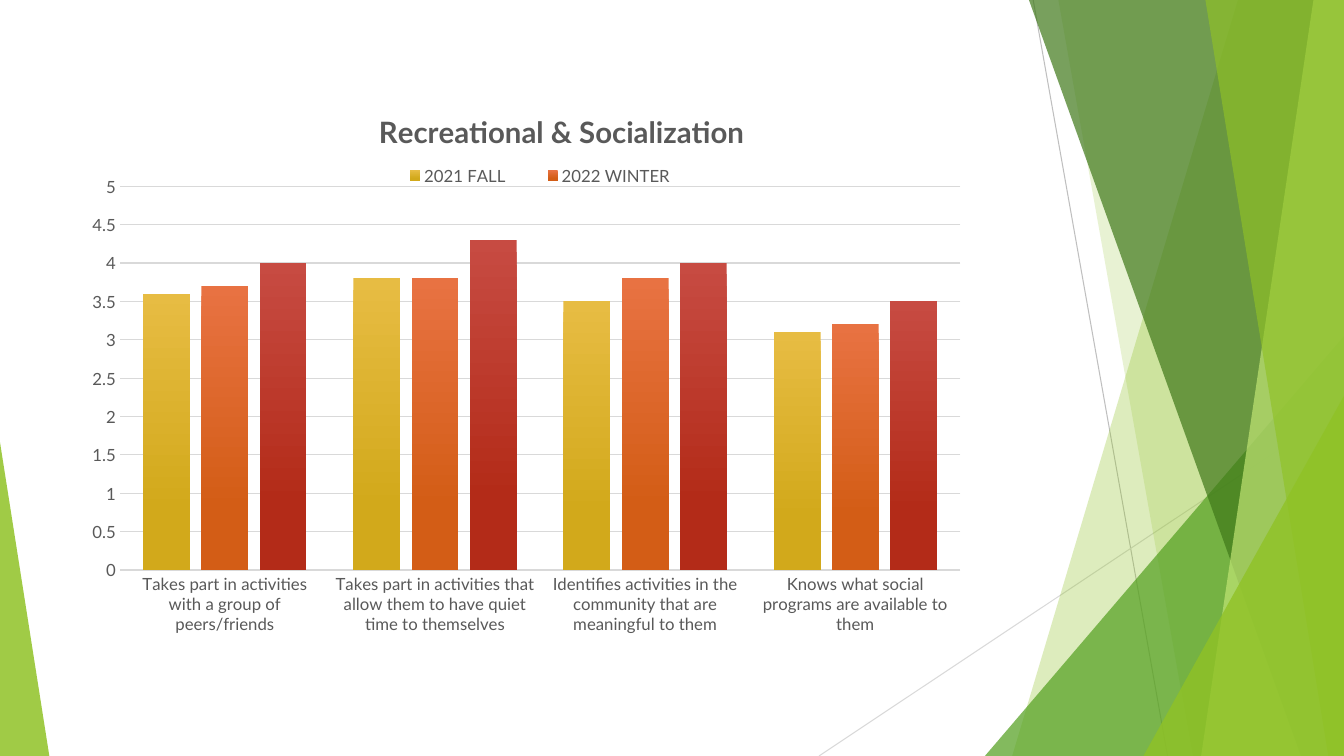
from dataclasses import dataclass

from lxml import etree
from pptx import Presentation
from pptx.chart.chart import Chart
from pptx.chart.data import CategoryChartData
from pptx.dml.color import RGBColor
from pptx.enum.chart import XL_CHART_TYPE as ChartType, XL_LEGEND_POSITION as LegendPos
from pptx.enum.chart import XL_TICK_MARK as TickMark
from pptx.enum.shapes import MSO_CONNECTOR as Connector, MSO_SHAPE as Shape
from pptx.oxml import parse_xml
from pptx.oxml.ns import nsdecls, qn
from pptx.util import Pt

PX = 9525  # EMU per px, 96 px to the inch
WIDTH, HEIGHT = 1280, 720
FONT = "Lato"

LIME = RGBColor(0x90, 0xC2, 0x26)
PALE_LIME = RGBColor(0xC0, 0xE4, 0x74)
GREEN = RGBColor(0x54, 0xA0, 0x21)
DARK_GREEN = RGBColor(0x3F, 0x78, 0x19)
GREY = RGBColor(0xBF, 0xBF, 0xBF)
LIGHT_GREY = RGBColor(0xD9, 0xD9, 0xD9)
TEXT_GREY = RGBColor(0x59, 0x59, 0x59)


@dataclass
class Ray:
    start: tuple[int, int]
    end: tuple[int, int]
    color: RGBColor


@dataclass
class Facet:
    """Full-height band reaching from a slanted left edge to the slide's right edge."""
    top_x: int
    bottom_x: int
    color: RGBColor
    opacity: int


@dataclass
class Corner:
    """Right triangle standing on the slide's bottom edge."""
    left: int
    top: int
    width: int
    apex: int
    color: RGBColor
    opacity: int


@dataclass
class Season:
    name: str
    scores: tuple[float, ...]
    light: RGBColor
    deep: RGBColor


RAYS = [
    Ray((984, 0), (1112, HEIGHT), GREY),
    Ray((WIDTH, 387), (780, HEIGHT), LIGHT_GREY),
]
DECOR = [
    Facet(1179, 964, LIME, 30),
    Facet(1008, 1136, LIME, 20),
    Corner(938, 320, 342, 1, GREEN, 72),
    Facet(980, 1239, DARK_GREEN, 70),
    Facet(1251, 1144, PALE_LIME, 70),
    Facet(1148, 1265, LIME, 65),
    Corner(1089, 377, 191, 1, LIME, 80),
    Corner(0, 421, 47, 0, LIME, 85),
]
SKILLS = [
    "Takes part in activities with a group of peers/friends",
    "Takes part in activities that allow them to have quiet time to themselves",
    "Identifies activities in the community that are meaningful to them",
    "Knows what social programs are available to them",
]
SEASONS = [
    Season("2021 FALL", (3.6, 3.8, 3.5, 3.1),
           RGBColor(0xE7, 0xBC, 0x43), RGBColor(0xD2, 0xA9, 0x1B)),
    Season("2022 WINTER", (3.7, 3.8, 3.8, 3.2),
           RGBColor(0xE8, 0x72, 0x42), RGBColor(0xD3, 0x5D, 0x16)),
    Season("", (4, 4.3, 4, 3.5),
           RGBColor(0xC7, 0x4B, 0x42), RGBColor(0xB3, 0x2B, 0x18)),
]


def draw_ray(shapes, ray: Ray) -> None:
    ends = [v * PX for v in ray.start + ray.end]
    line = shapes.add_connector(Connector.STRAIGHT, *ends)
    line.line.color.rgb = ray.color
    line.line.width = Pt(0.75)
    etree.SubElement(line._element.spPr, qn("a:effectLst"))


def draw_decor(shapes, part: Facet | Corner) -> None:
    if isinstance(part, Facet):
        outline = shapes.build_freeform(part.top_x, 0, scale=PX)
        outline.add_line_segments([(WIDTH, 0), (WIDTH, HEIGHT), (part.bottom_x, HEIGHT)])
        shape = outline.convert_to_shape()
    else:
        box = (part.left, part.top, part.width, HEIGHT - part.top)
        shape = shapes.add_shape(Shape.ISOSCELES_TRIANGLE, *(v * PX for v in box))
        shape.adjustments[0] = part.apex
    shape.shadow.inherit = False
    shape.line.fill.background()
    shape.fill.solid()
    shape.fill.fore_color.rgb = part.color
    color = shape._element.spPr.find(".//" + qn("a:srgbClr"))
    etree.SubElement(color, qn("a:alpha"), val=str(part.opacity * 1000))


def set_font(font, size: int, bold: bool = False) -> None:
    font.name, font.size, font.bold = FONT, Pt(size), bold
    font.color.rgb = TEXT_GREY


def layout_xml(inner: bool = False, **place: float):
    """Manual layout, with x, y, w and h as shares of the chart area."""
    target = '<c:layoutTarget val="inner"/>' if inner else ""
    modes = '<c:xMode val="edge"/><c:yMode val="edge"/>'
    sizes = "".join(f'<c:{key} val="{share}"/>' for key, share in place.items())
    return parse_xml(f'<c:layout {nsdecls("c")}><c:manualLayout>{target}{modes}{sizes}'
                     "</c:manualLayout></c:layout>")


def place_part(parent, layout, before: str) -> None:
    for old in parent.findall(qn("c:layout")):
        parent.remove(old)
    parent.find(qn(before)).addprevious(layout)


def style_axes(chart: Chart) -> None:
    for axis in (chart.category_axis, chart.value_axis):
        axis.major_tick_mark = axis.minor_tick_mark = TickMark.NONE
        set_font(axis.tick_labels.font, 12)
    chart.category_axis.format.line.color.rgb = LIGHT_GREY
    chart.category_axis.format.line.width = Pt(1)
    scores = chart.value_axis
    scores.minimum_scale, scores.maximum_scale, scores.major_unit = 0, 5, 0.5
    scores.format.line.fill.background()
    scores.major_gridlines.format.line.color.rgb = LIGHT_GREY
    scores.major_gridlines.format.line.width = Pt(0.75)


def draw_chart(shapes) -> None:
    data = CategoryChartData()
    data.categories = SKILLS
    for season in SEASONS:
        data.add_series(season.name, season.scores)
    box = (v * PX for v in (88, 95, 835, 515))
    chart = shapes.add_chart(ChartType.COLUMN_CLUSTERED, *box, data).chart
    chart.font.name, chart.font.size = FONT, Pt(10)
    style_axes(chart)

    # Bars
    bars = chart.plots[0]
    bars.gap_width, bars.overlap, bars.vary_by_categories = 100, -24, False
    for series, season in zip(bars.series, SEASONS):
        fill = series.format.fill
        fill.gradient()
        fill.gradient_angle = 270
        light, deep = fill.gradient_stops
        light.color.rgb, light.position = season.light, 0
        deep.color.rgb, deep.position = season.deep, 0.78
    place_part(chart._chartSpace.chart.plotArea,
               layout_xml(True, x=0.03, y=0.16, w=0.96, h=0.71), "c:barChart")

    # Title
    title = chart.chart_title
    title.text_frame.text = "Recreational & Socialization"
    set_font(title.text_frame.paragraphs[0].font, 21, bold=True)
    title.include_in_layout = False
    place_part(title._element, layout_xml(x=0.32, y=0.01), "c:overlay")

    # Legend, with entries for the named seasons only
    chart.has_legend = True
    legend = chart.legend
    legend.position = LegendPos.BOTTOM
    legend.include_in_layout = False
    set_font(legend.font, 12)
    place_part(legend._element, layout_xml(x=0.32, y=0.12, w=0.38, h=0.04), "c:overlay")
    for index, season in enumerate(SEASONS):
        if not season.name:
            entry = parse_xml(f'<c:legendEntry {nsdecls("c")}><c:idx val="{index}"/>'
                              '<c:delete val="1"/></c:legendEntry>')
            legend._element.find(qn("c:layout")).addprevious(entry)


def main() -> None:
    deck = Presentation()
    deck.slide_width, deck.slide_height = WIDTH * PX, HEIGHT * PX
    shapes = deck.slides.add_slide(deck.slide_layouts[6]).shapes
    for ray in RAYS:
        draw_ray(shapes, ray)
    for part in DECOR:
        draw_decor(shapes, part)
    draw_chart(shapes)
    deck.save("out.pptx")


if __name__ == "__main__":
    main()
